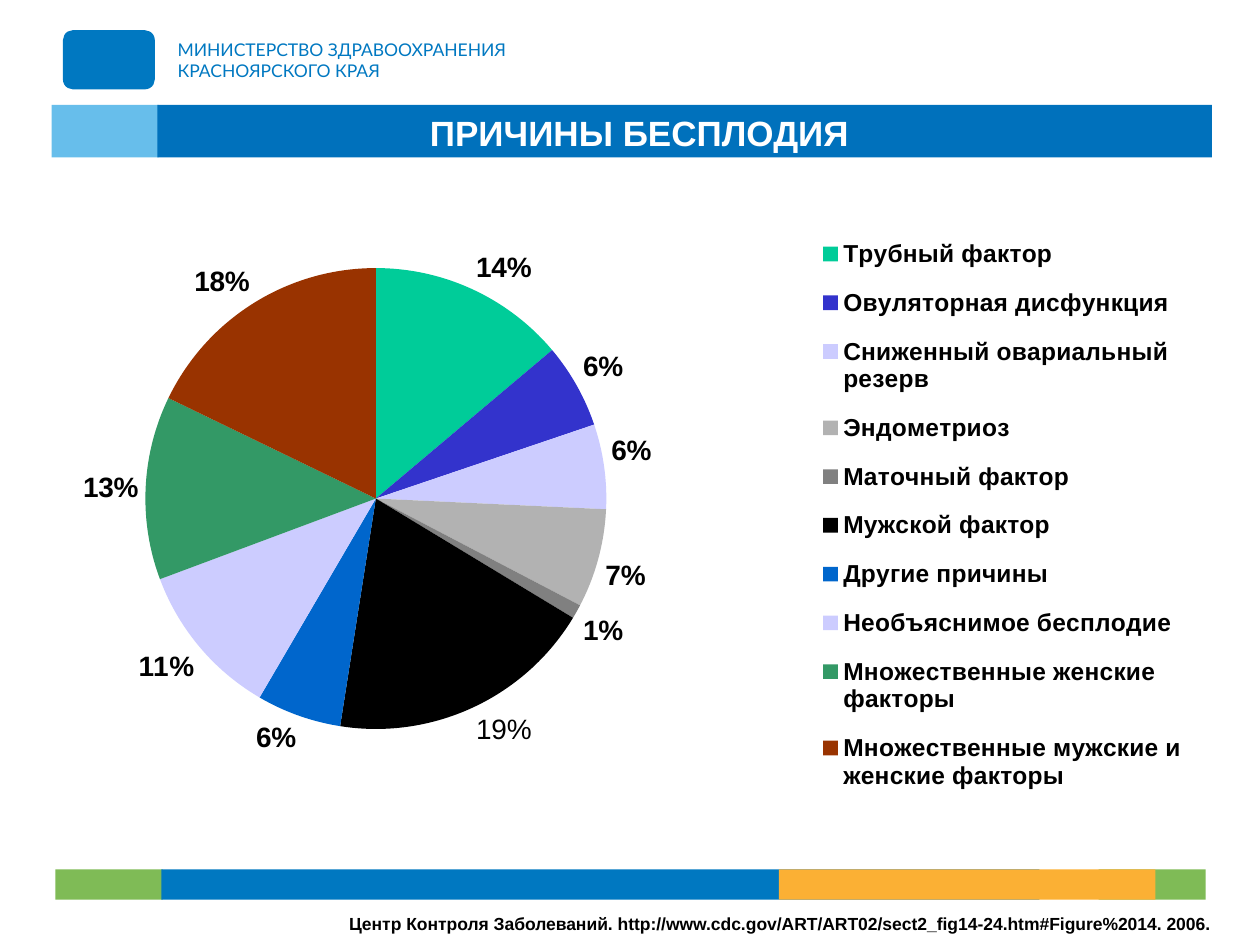
from typing import NamedTuple

from lxml.etree import SubElement
from pptx import Presentation
from pptx.chart.data import CategoryChartData
from pptx.dml.color import RGBColor
from pptx.enum.chart import XL_CHART_TYPE, XL_LABEL_POSITION as LabelPos, XL_LEGEND_POSITION
from pptx.enum.shapes import MSO_SHAPE as Shape
from pptx.enum.text import MSO_ANCHOR as Anchor, PP_ALIGN as Align
from pptx.oxml.ns import qn
from pptx.util import Pt

COLORS = {
    "green": "7FBB56", "sky": "67BEEB", "header": "0071BC", "blue": "0078C1",
    "orange": "FBB034", "white": "FFFFFF", "black": "000000",
}


class Bar(NamedTuple):
    left: float
    top: float
    width: float
    height: float
    color: str
    shape: Shape = Shape.RECTANGLE


class Cause(NamedTuple):
    name: str
    percent: int
    color: str


HEADER_TOP, HEADER_H = 60, 30
FOOTER_TOP, FOOTER_H = 496.8, 17.3
BARS = [
    Bar(627.8, FOOTER_TOP, 61.2, FOOTER_H, "green"),
    Bar(29.5, HEADER_TOP, 61.2, HEADER_H, "sky"),
    Bar(90, HEADER_TOP, 602.6, HEADER_H, "header"),
    Bar(36, 17.3, 52.5, 33.8, "blue", Shape.ROUNDED_RECTANGLE),
    Bar(31.7, FOOTER_TOP, 61.2, FOOTER_H, "green"),
    Bar(92.2, FOOTER_TOP, 501.8, FOOTER_H, "blue"),
    Bar(445, FOOTER_TOP, 215.3, FOOTER_H, "orange"),
]
CAUSES = [
    Cause("Трубный фактор", 14, "00CC99"),
    Cause("Овуляторная дисфункция", 6, "3333CC"),
    Cause("Сниженный овариальный резерв", 6, "CCCCFF"),
    Cause("Эндометриоз", 7, "B2B2B2"),
    Cause("Маточный фактор", 1, "808080"),
    Cause("Мужской фактор", 19, "000000"),
    Cause("Другие причины", 6, "0066CC"),
    Cause("Необъяснимое бесплодие", 11, "CCCCFF"),
    Cause("Множественные женские факторы", 13, "339966"),
    Cause("Множественные мужские и женские факторы", 18, "993300"),
]
PLAIN_LABEL = 5


def rgb(name: str) -> RGBColor:
    return RGBColor.from_string(COLORS.get(name, name))


def set_font(font, size: float, color: str = "black", bold: bool = True, name: str = "Arial") -> None:
    font.size, font.bold, font.name = Pt(size), bold, name
    font.color.rgb = rgb(color)


def add_bar(slide, bar: Bar) -> None:
    sp = slide.shapes.add_shape(bar.shape, Pt(bar.left), Pt(bar.top), Pt(bar.width), Pt(bar.height))
    sp.shadow.inherit = False
    sp.fill.solid()
    sp.fill.fore_color.rgb = rgb(bar.color)
    sp.line.fill.background()


def add_text(slide, lines: list[str], left: float, top: float, width: float, height: float, *,
             align=Align.LEFT, anchor=Anchor.TOP, inset: tuple = (0, 0), before: float = 0,
             **font) -> None:
    """Lines share one paragraph; inset is (horizontal, vertical)."""
    tf = slide.shapes.add_textbox(Pt(left), Pt(top), Pt(width), Pt(height)).text_frame
    tf.word_wrap = True
    tf.vertical_anchor = anchor
    tf.margin_left = tf.margin_right = Pt(inset[0])
    tf.margin_top = tf.margin_bottom = Pt(inset[1])
    p = tf.paragraphs[0]
    p.alignment, p.space_before = align, Pt(before)
    for i, line in enumerate(lines):
        if i:
            p.add_line_break()
        r = p.add_run()
        r.text = line
        set_font(r.font, **font)


def place(parent, index: int, x: float, y: float, w: float, h: float, inner: bool = False) -> None:
    """Give a chart part a fixed place, in fractions of the chart."""
    for old in parent.findall(qn("c:layout")):
        parent.remove(old)
    layout = SubElement(parent, qn("c:layout"))
    parent.insert(index, layout)
    manual = SubElement(layout, qn("c:manualLayout"))
    settings = [("layoutTarget", "inner")] if inner else []
    settings += [("xMode", "edge"), ("yMode", "edge"), ("x", x), ("y", y), ("w", w), ("h", h)]
    for tag, value in settings:
        SubElement(manual, qn(f"c:{tag}")).set("val", str(value))


def add_causes_pie(slide) -> None:
    data = CategoryChartData()
    data.categories = [c.name for c in CAUSES]
    data.add_series("Series 1", [c.percent for c in CAUSES])
    chart = slide.shapes.add_chart(
        XL_CHART_TYPE.PIE, Pt(22.3), Pt(106.6), Pt(675.4), Pt(371.5), data).chart
    set_font(chart.font, 16.2, name="Lato")
    chart.has_title = False
    chart.has_legend = True
    legend = chart.legend
    legend.position = XL_LEGEND_POSITION.RIGHT
    legend.include_in_layout = False
    set_font(legend.font, 14)
    place(legend._element, 1, 0.65, 0.05, 0.33, 0.91)
    place(chart._chartSpace.chart.plotArea, 0, 0.09, 0.07, 0.39, 0.82, inner=True)

    plot = chart.plots[0]
    plot.vary_by_categories = True
    series = plot.series[0]
    labels = series.data_labels
    labels.show_percentage, labels.show_value = True, False
    labels.number_format, labels.number_format_is_linked = "0%", False
    labels.position = LabelPos.OUTSIDE_END
    set_font(labels.font, 16)
    for i, cause in enumerate(CAUSES):
        fmt = series.points[i].format
        fmt.fill.solid()
        fmt.fill.fore_color.rgb = rgb(cause.color)
        fmt.line.fill.background()

    label = series.points[PLAIN_LABEL].data_label
    r = label.text_frame.paragraphs[0].add_run()
    r.text = f"{CAUSES[PLAIN_LABEL].percent}%"
    set_font(r.font, 16, bold=False)
    label.position = LabelPos.OUTSIDE_END


def main() -> None:
    prs = Presentation()
    prs.slide_width, prs.slide_height = Pt(720), Pt(540)
    slide = prs.slides.add_slide(prs.slide_layouts[6])
    for bar in BARS:
        add_bar(slide, bar)
    add_text(slide, ["МИНИСТЕРСТВО ЗДРАВООХРАНЕНИЯ", "КРАСНОЯРСКОГО КРАЯ"],
             101.5, 22.3, 287.3, 23.8, size=10, color="blue", bold=False, name="Lato")
    add_causes_pie(slide)
    add_text(slide, ["Центр Контроля Заболеваний. "
                     "http://www.cdc.gov/ART/ART02/sect2_fig14-24.htm#Figure%2014. 2006."],
             22.3, 511.9, 668.9, 21.6, align=Align.RIGHT, anchor=Anchor.BOTTOM,
             before=3.8, size=10)
    add_text(slide, ["ПРИЧИНЫ БЕСПЛОДИЯ"], 10.8, 50.4, 709.2, 51.1, align=Align.CENTER,
             anchor=Anchor.MIDDLE, inset=(7.2, 3.6), size=20, color="white")
    prs.save("out.pptx")


if __name__ == "__main__":
    main()
